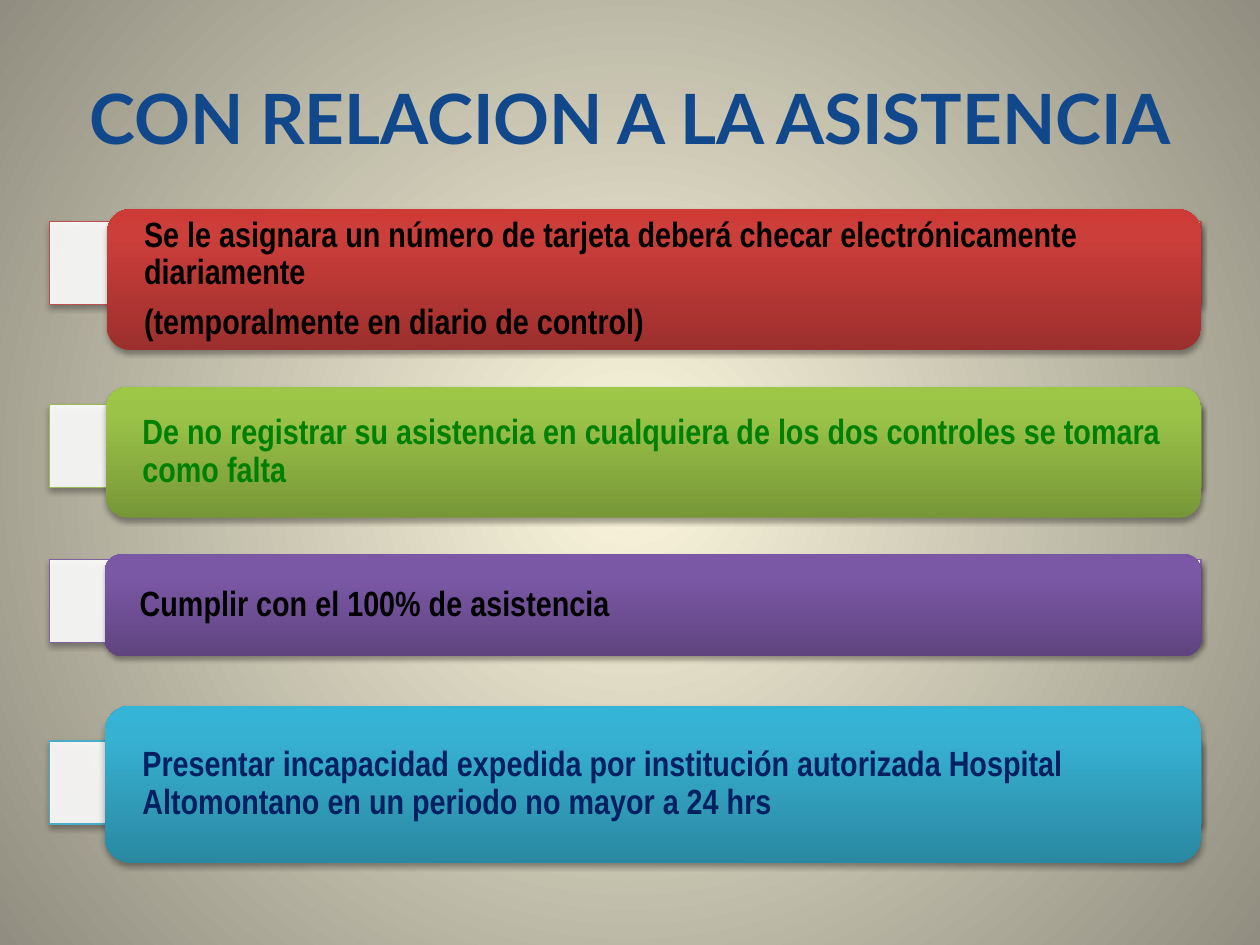
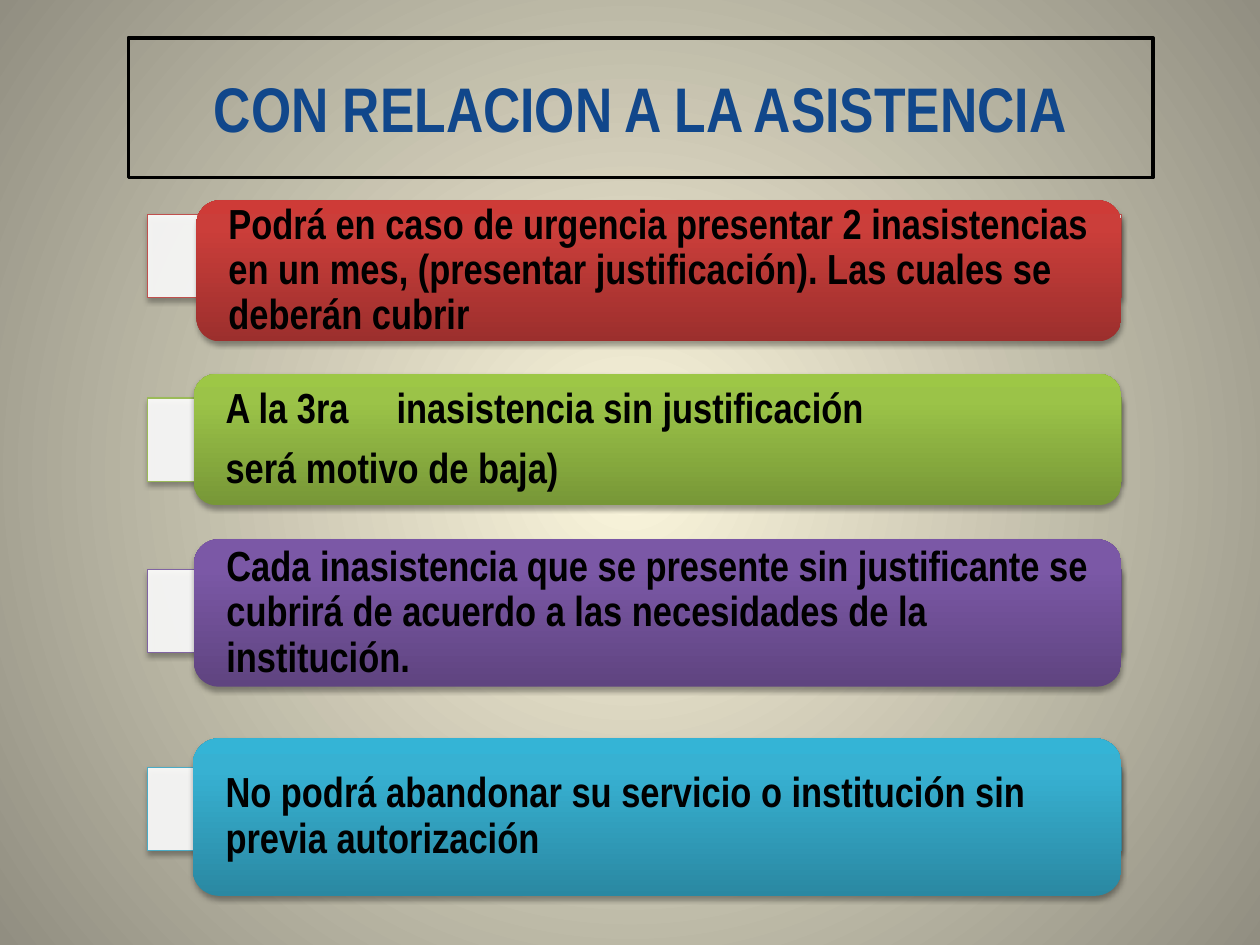
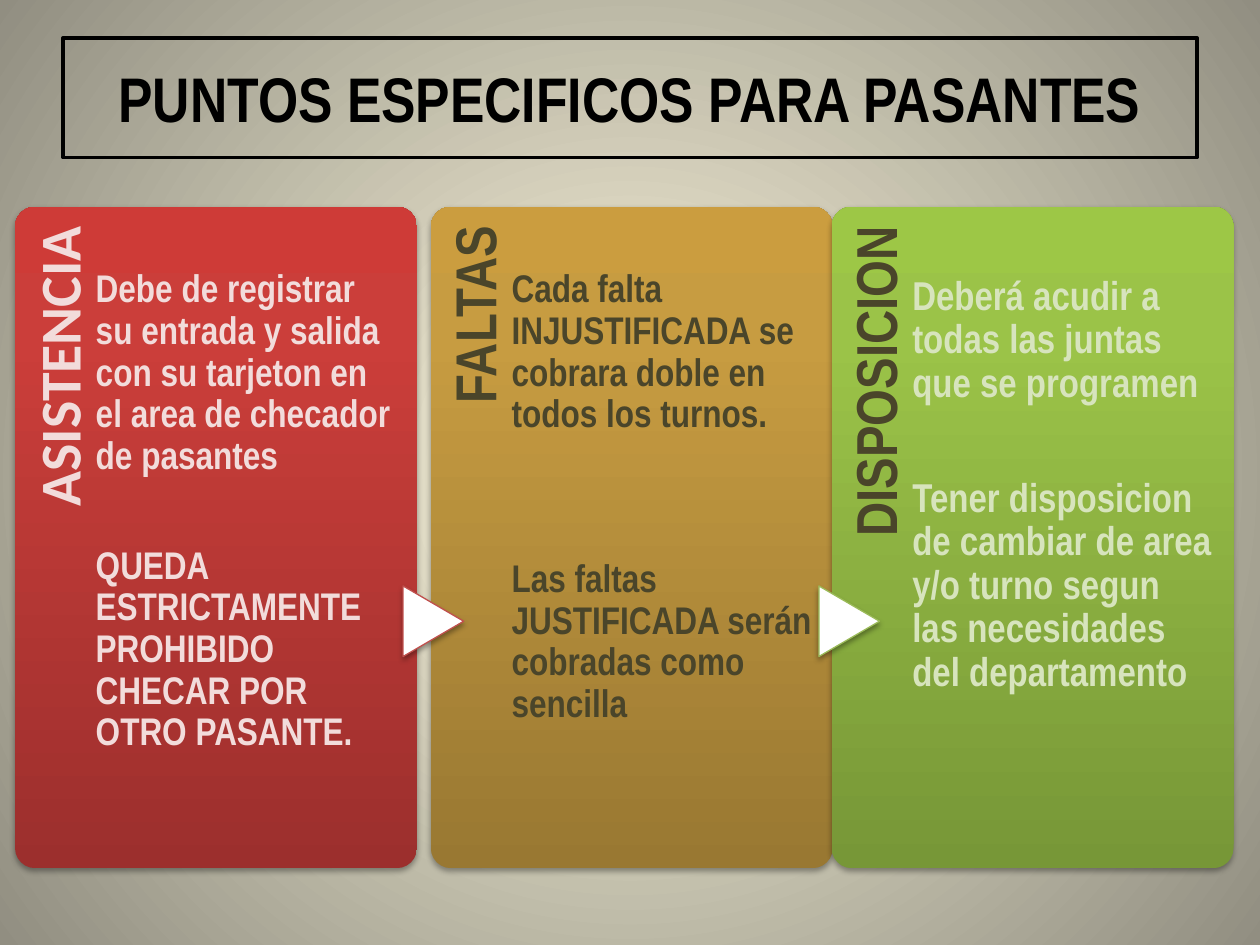
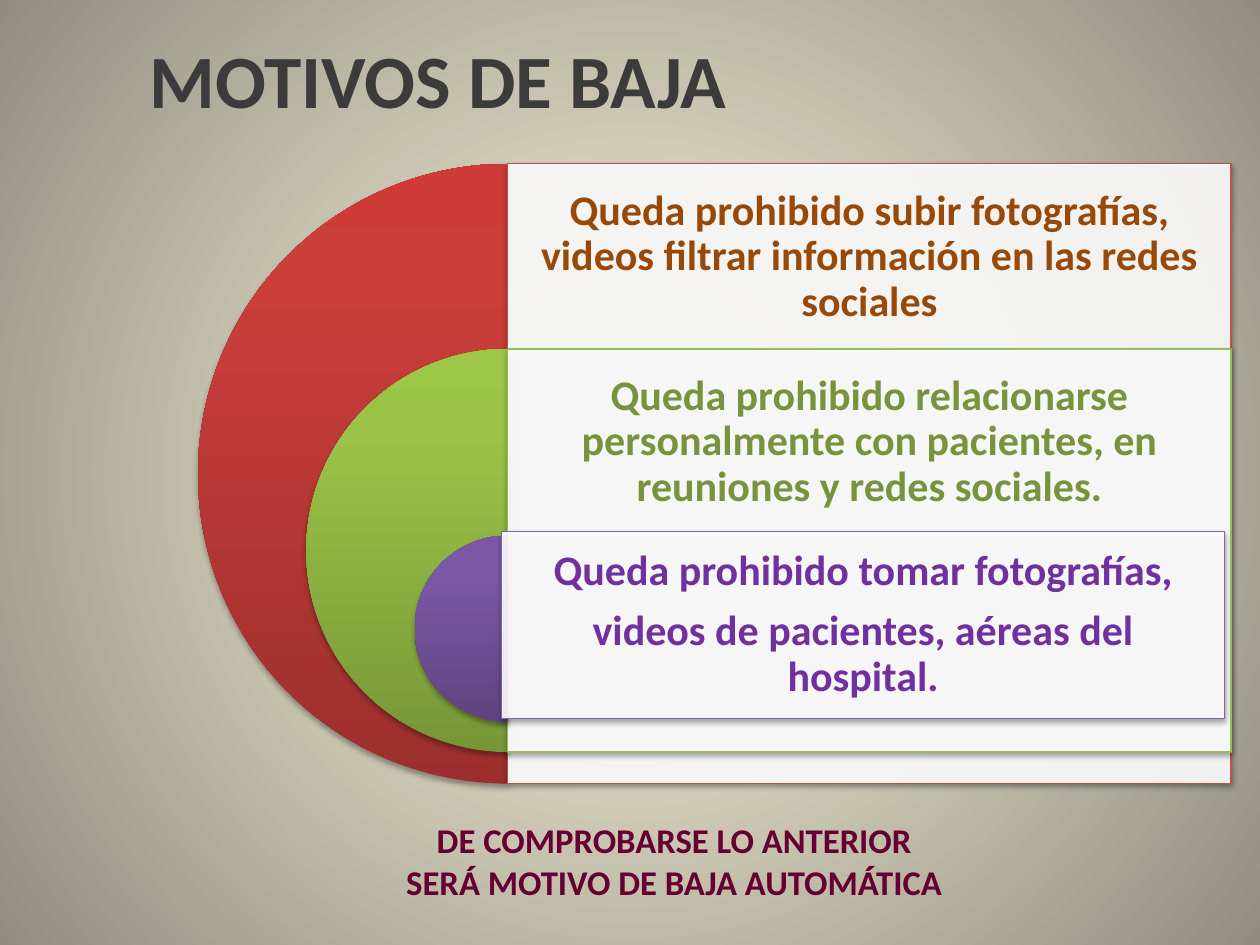
import copy
from lxml import etree
from pptx import Presentation
from pptx.dml.color import RGBColor
from pptx.enum import shapes, text
from pptx.oxml import ns
from pptx.util import Pt

WHITE = RGBColor(0xFF, 0xFF, 0xFF)
BLACK = RGBColor(0x00, 0x00, 0x00)
CREAM = RGBColor(0xFC, 0xF7, 0xDD)
STONE = RGBColor(0x91, 0x8E, 0x81)
BLUE = RGBColor(0x11, 0x47, 0x8B)
NAVY = RGBColor(0x00, 0x20, 0x60)
GREEN = RGBColor(0x00, 0x80, 0x00)
WINE = RGBColor(0x66, 0x00, 0x33)
CHARCOAL = RGBColor(0x3B, 0x3B, 0x3B)
PINK = RGBColor(0xF2, 0xDC, 0xDB)
OLIVE = RGBColor(0x4A, 0x45, 0x2A)
PALE_GREEN = RGBColor(0xD7, 0xE4, 0xBD)
BROWN = RGBColor(0x98, 0x48, 0x07)
MOSS = RGBColor(0x77, 0x93, 0x3C)
VIOLET = RGBColor(0x70, 0x30, 0xA0)

RED_LINE = RGBColor(0xC0, 0x50, 0x4D)
GREEN_LINE = RGBColor(0x9B, 0xBB, 0x59)
PURPLE_LINE = RGBColor(0x80, 0x64, 0xA2)
AQUA_LINE = RGBColor(0x4B, 0xAC, 0xC6)
RED_FADE = [RGBColor(0x9C, 0x2F, 0x2D), RGBColor(0xCB, 0x3E, 0x3A), RGBColor(0xCE, 0x3B, 0x37)]
GREEN_FADE = [RGBColor(0x77, 0x97, 0x37), RGBColor(0x9B, 0xC3, 0x48), RGBColor(0x9D, 0xC7, 0x46)]
PURPLE_FADE = [RGBColor(0x5F, 0x44, 0x80), RGBColor(0x7B, 0x58, 0xA6), RGBColor(0x7C, 0x57, 0xA8)]
AQUA_FADE = [RGBColor(0x2A, 0x88, 0xA2), RGBColor(0x37, 0xB1, 0xD2), RGBColor(0x34, 0xB4, 0xD6)]
GOLD_FADE = [RGBColor(0x99, 0x78, 0x32), RGBColor(0xC7, 0x9C, 0x41), RGBColor(0xCB, 0x9D, 0x3F)]

NARROW = "Arial Narrow"
CALIBRI = "Calibri"
LEFT, CENTER, RIGHT = text.PP_ALIGN.LEFT, text.PP_ALIGN.CENTER, text.PP_ALIGN.RIGHT
TOP, MIDDLE = text.MSO_ANCHOR.TOP, text.MSO_ANCHOR.MIDDLE
SHAPE = shapes.MSO_SHAPE


def add_solid(page, kind, place, fade=None, outline=None, opacity=90):
    box = page.shapes.add_shape(kind, *[Pt(length) for length in place])
    if fade:
        box.fill.gradient()
        box.fill.gradient_angle = 90
        stop_list = box._element.xpath(".//a:gsLst")[0]
        stop_list.append(copy.deepcopy(stop_list[-1]))
        for stop, position, color in zip(box.fill.gradient_stops, (0, 0.8, 1), fade):
            stop.position = position
            stop.color.rgb = color
        box.line.fill.background()
    else:
        box.fill.solid()
        box.fill.fore_color.rgb = WHITE
        white = box._element.xpath("./p:spPr/a:solidFill/a:srgbClr")[0]
        etree.SubElement(white, ns.qn("a:alpha"), val=str(opacity * 1000))
        box.line.color.rgb = outline
        box.line.width = Pt(0.75)
    box.shadow.inherit = False
    effects = box._element.xpath("./p:spPr/a:effectLst")[0]
    shadow = etree.SubElement(effects, ns.qn("a:outerShdw"), blurRad=str(Pt(3.1)),
                              dist=str(Pt(1.8)), dir="5400000", rotWithShape="0")
    shade = etree.SubElement(shadow, ns.qn("a:srgbClr"), val="000000")
    etree.SubElement(shade, ns.qn("a:alpha"), val="35000")
    return box


def write(box, lines, font, size, color, align=LEFT, anchor=MIDDLE,
          margins=(7.2, 3.6, 7.2, 3.6), tight=True, gap=0):
    frame = box.text_frame
    frame.word_wrap = True
    frame.auto_size = text.MSO_AUTO_SIZE.NONE
    frame.vertical_anchor = anchor
    frame.margin_left, frame.margin_top, frame.margin_right, frame.margin_bottom = map(Pt, margins)
    frame.text = "\n".join(lines)
    for number, para in enumerate(frame.paragraphs):
        para.alignment = align
        if tight:
            para.line_spacing = 0.9
            para.space_after = Pt(round(0.35 * size, 2))
        if gap and number:
            para.space_before = Pt(gap)
        if "\t" in para.text:
            tabs = etree.SubElement(para._p.get_or_add_pPr(), ns.qn("a:tabLst"))
            etree.SubElement(tabs, ns.qn("a:tab"), pos=str(Pt(97.7)), algn="l")
        for span in para.runs:
            span.font.name = font
            span.font.size = Pt(size)
            span.font.bold = True
            span.font.color.rgb = color


deck = Presentation()
deck.slide_width = Pt(720)
deck.slide_height = Pt(540)

backdrop = deck.slide_master.background.fill
backdrop.gradient()
for stop, position, color in zip(backdrop.gradient_stops, (0, 1), (CREAM, STONE)):
    stop.position = position
    stop.color.rgb = color
glow = deck.slide_master.element.xpath("./p:cSld/p:bg//a:gradFill")[0]
for direction in glow.xpath("./a:lin"):
    glow.remove(direction)
circle = etree.SubElement(glow, ns.qn("a:path"), path="circle")
etree.SubElement(circle, ns.qn("a:fillToRect"), l="50000", t="50000", r="50000", b="50000")

titles = [
    ("CON RELACION A LA ASISTENCIA", (36, 21.6, 648, 90), "Lato", 39.6, BLUE, False),
    ("CON RELACION A LA ASISTENCIA", (73.4, 21.6, 585.4, 79.9), NARROW, 36, BLUE, True),
    ("PUNTOS ESPECIFICOS PARA PASANTES", (36, 21.6, 648, 68.4), NARROW, 36, BLACK, True),
    ("DE COMPROBARSE LO ANTERIOR\vSERÁ MOTIVO DE BAJA AUTOMÁTICA", (90, 455.8, 590.4, 72),
     CALIBRI, 19.8, WINE, False),
]
pages = []
for wording, place, font, size, color, framed in titles:
    page = deck.slides.add_slide(deck.slide_layouts[5])
    title = page.shapes.title
    title.left, title.top, title.width, title.height = map(Pt, place)
    write(title, [wording], font, size, color, CENTER, tight=False)
    if framed:
        title.line.color.rgb = BLACK
        title.line.width = Pt(2)
    pages.append(page)
attendance, absences, specifics, dismissal = pages

TAB_HEIGHT = 47.5
row_colors = [(RED_FADE, RED_LINE), (GREEN_FADE, GREEN_LINE),
              (PURPLE_FADE, PURPLE_LINE), (AQUA_FADE, AQUA_LINE)]
attendance_rows = [
    (126.7, 61.2, 119.5, 80.6, BLACK,
     ["Se le asignara un número de tarjeta deberá checar electrónicamente diariamente",
      "(temporalmente en diario de control)"]),
    (231.1, 60.5, 221, 74.9, GREEN,
     ["De no registrar su asistencia en cualquiera de los dos controles se tomara como falta"]),
    (319.7, 59.8, 316.8, 58.3, BLACK, ["Cumplir con el 100% de asistencia"]),
    (423.4, 59.8, 403.2, 90, NAVY,
     ["Presentar incapacidad expedida por institución autorizada Hospital Altomontano "
      "en un periodo no mayor a 24 hrs"]),
]
absence_rows = [
    (122.4, 112.3, 114.5, 80.6, BLACK,
     ["Podrá en caso de urgencia presentar 2 inasistencias en un mes, "
      "(presentar justificación). Las cuales se deberán cubrir"]),
    (227.5, 110.9, 213.8, 74.9, BLACK,
     ["A la 3ra\tinasistencia sin justificación", "será motivo de baja)"]),
    (325.4, 110.9, 308.2, 84.2, BLACK,
     ["Cada inasistencia que se presente sin justificante se cubrirá de acuerdo a las "
      "necesidades de la institución."]),
    (438.5, 110.2, 421.9, 90, BLACK,
     ["No podrá abandonar su servicio o institución sin previa autorización"]),
]
lists = [(attendance, attendance_rows, 28.1, 686.4, 20, 17.3),
         (absences, absence_rows, 84.2, 640.8, 24, 14.4)]
for page, rows, tab_left, right, size, margin in lists:
    for (fade, outline), (tab_top, left, top, height, color, lines) in zip(row_colors, rows):
        width = right - left
        corner = 0.048 * height
        add_solid(page, SHAPE.RECTANGLE, (tab_left, tab_top, right - tab_left, TAB_HEIGHT),
                  outline=outline)
        add_solid(page, SHAPE.ROUNDED_RECTANGLE, (left, top, width, height), fade)
        box = page.shapes.add_textbox(Pt(left + corner), Pt(top + corner),
                                      Pt(width - 2 * corner), Pt(height - 2 * corner))
        write(box, lines, NARROW, size, color, margins=(margin, 0, margin, 0))

PANEL_TOP, PANEL_WIDTH, PANEL_HEIGHT = 118.1, 229.7, 378
LABEL_WIDTH, LABEL_HEIGHT = 310.3, 46.1
panels = [
    (8.6, RED_FADE, None, None, "ASISTENCIA", CALIBRI, PINK, 22, PINK, 36, 1,
     ["Debe de registrar su entrada y salida con su tarjeton en el area de checador de pasantes",
      "QUEDA ESTRICTAMENTE PROHIBIDO CHECAR POR OTRO PASANTE."]),
    (246.2, GOLD_FADE, 227.5, RED_LINE, "FALTAS", NARROW, OLIVE, 22, OLIVE, 36, 2,
     ["Cada falta INJUSTIFICADA se cobrara doble en todos los turnos.",
      "Las faltas JUSTIFICADA serán cobradas como sencilla"]),
    (475.2, GREEN_FADE, 465.1, GREEN_LINE, "DISPOSICION", NARROW, OLIVE, 23, PALE_GREEN, 39.4, 1,
     ["Deberá acudir a todas las juntas que se programen",
      "Tener disposicion de cambiar de area y/o turno segun\vlas necesidades del departamento"]),
]
for (left, fade, arrow_left, arrow_line, label, label_font, label_color,
     size, color, margin_top, gap_lines, lines) in panels:
    panel = add_solid(specifics, SHAPE.ROUNDED_RECTANGLE,
                      (left, PANEL_TOP, PANEL_WIDTH, PANEL_HEIGHT), fade)
    panel.adjustments[0] = 0.05
    box = specifics.shapes.add_textbox(Pt(left + 23.4 - LABEL_WIDTH / 2), Pt(249.8),
                                       Pt(LABEL_WIDTH), Pt(LABEL_HEIGHT))
    box.rotation = 270
    write(box, [label], label_font, 33, label_color, RIGHT, TOP, (0, 8.6, 11.5, 0))
    if arrow_left:
        arrow = add_solid(specifics, SHAPE.FLOWCHART_EXTRACT, (arrow_left, 337.7, 40.3, 34.6),
                          outline=arrow_line, opacity=100)
        arrow.rotation = 90
    box = specifics.shapes.add_textbox(Pt(left + 46.1), Pt(PANEL_TOP), Pt(171.4), Pt(PANEL_HEIGHT))
    write(box, lines, NARROW, size, color, anchor=TOP, margins=(0, margin_top, 0, 0),
          gap=round(1.43 * size * gap_lines, 1))

PIE_CENTER, REASON_WIDTH, REASON_HEIGHT = 290.2, 413.3, 106.6
reasons = [
    (93.6, 354.2, 290.2, 93.6, RED_FADE, RED_LINE, BROWN,
     ["Queda prohibido subir fotografías, videos filtrar información en las redes sociales"]),
    (199.4, 230.4, 290.2, 199.4, GREEN_FADE, GREEN_LINE, MOSS,
     ["Queda prohibido relacionarse personalmente con pacientes, en reuniones y redes sociales."]),
    (306, 106.6, 286.6, 303.8, PURPLE_FADE, PURPLE_LINE, VIOLET,
     ["Queda prohibido tomar fotografías,", "videos de pacientes, aéreas del hospital."]),
]
for pie_top, size, left, top, fade, outline, color, lines in reasons:
    pie = add_solid(dismissal, SHAPE.PIE, (PIE_CENTER - size / 2, pie_top, size, size), fade)
    pie.adjustments[0] = 54
    pie.adjustments[1] = 162
    add_solid(dismissal, SHAPE.RECTANGLE, (left, top, REASON_WIDTH, size), outline=outline)
    box = dismissal.shapes.add_textbox(Pt(left), Pt(top), Pt(REASON_WIDTH), Pt(REASON_HEIGHT))
    write(box, lines, CALIBRI, 24, color, CENTER, margins=(7.2, 7.2, 7.2, 7.2))

heading = dismissal.shapes.add_textbox(Pt(78.5), Pt(0), Pt(590.4), Pt(90))
write(heading, ["MOTIVOS DE BAJA"], CALIBRI, 43, CHARCOAL, tight=False)

deck.save("out.pptx")
